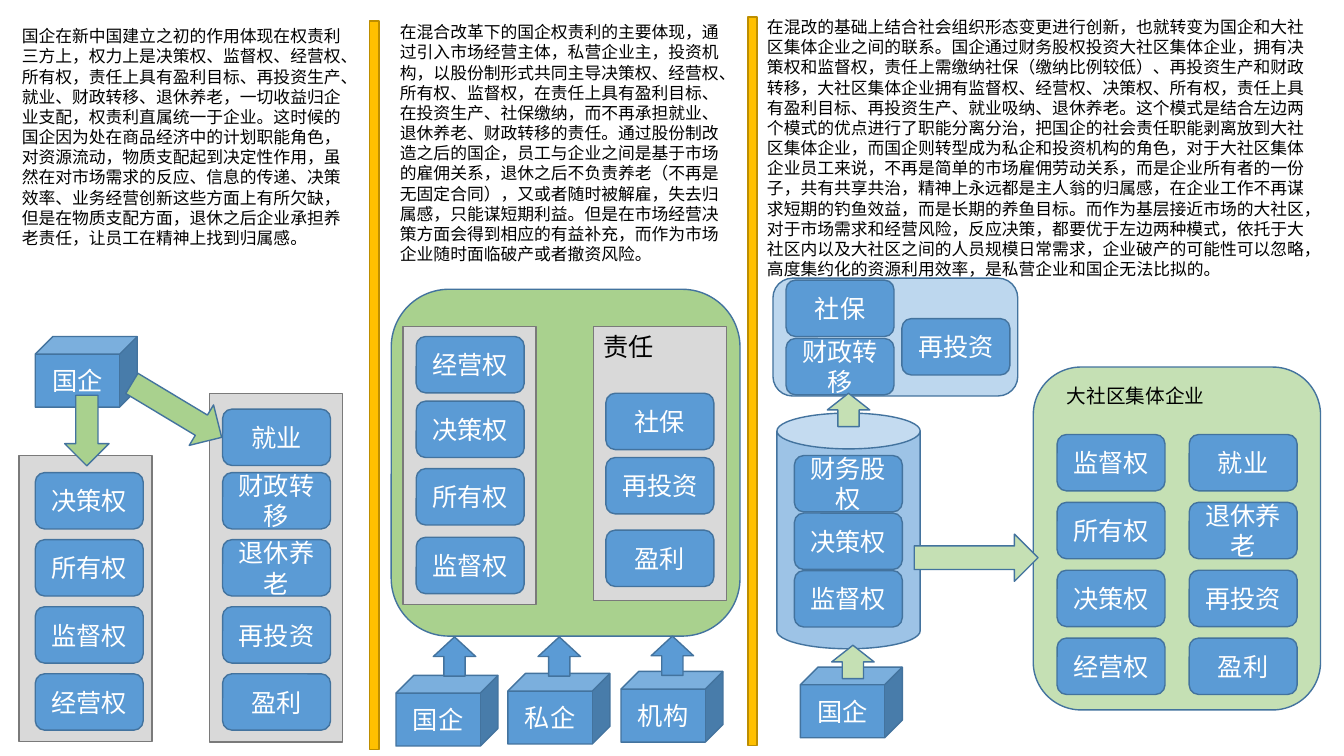
"""Build a one-slide comparison of three models of state enterprise powers and duties."""
from dataclasses import dataclass
from typing import Optional

from pptx import Presentation
from pptx.dml.color import RGBColor
from pptx.enum.shapes import MSO_SHAPE
from pptx.enum.text import MSO_ANCHOR, PP_ALIGN
from pptx.slide import Slide
from pptx.text.text import TextFrame
from pptx.util import Cm, Pt


@dataclass(frozen=True)
class Theme:
    font: str = "Calibri"
    label_size: int = 18
    caption_size: int = 14
    body_size: int = 12
    line_width: int = 1
    text: str = "000000"
    label: str = "FFFFFF"
    blue: str = "5B9BD5"
    can_blue: str = "9DC3E6"
    pale_blue: str = "BDD7EE"
    outline: str = "43739E"
    green: str = "A9D18E"
    pale_green: str = "C5E0B4"
    grey: str = "D9D9D9"
    grey_outline: str = "7A7A7A"
    gold: str = "FFC000"
    gold_outline: str = "BD8E00"


THEME = Theme()


@dataclass(frozen=True)
class Block:
    kind: MSO_SHAPE
    left: float
    top: float
    width: float
    height: float
    fill: str = THEME.blue
    line: str = THEME.outline
    label: Optional[str] = None
    rotation: float = 0


@dataclass(frozen=True)
class Column:
    left: float
    tops: tuple[float, ...]
    labels: tuple[str, ...]


@dataclass(frozen=True)
class Note:
    left: float
    top: float
    width: float
    height: float
    size: int
    text: str


def steps(top: float, pitch: float, count: int) -> tuple[float, ...]:
    """Return evenly spaced top positions."""
    return tuple(top + pitch * index for index in range(count))


def divider(left: float, top: float) -> Block:
    """Describe a gold bar between two models."""
    return Block(MSO_SHAPE.RECTANGLE, left, top, 0.23, 18.36, THEME.gold, THEME.gold_outline)


def group_box(left: float, top: float, height: float) -> Block:
    """Describe a grey box behind a column of labels."""
    return Block(MSO_SHAPE.RECTANGLE, left, top, 3.35, height, THEME.grey, THEME.grey_outline)


def cube(left: float, top: float, label: str) -> Block:
    """Describe an investor cube."""
    return Block(MSO_SHAPE.CUBE, left, top, 2.57, 1.78, label=label)


def up_arrow(left: float, top: float, height: float, fill: str) -> Block:
    """Describe an upward arrow."""
    return Block(MSO_SHAPE.UP_ARROW, left, top, 1.07, height, fill)


PANELS = (
    divider(9.32, 0.53),
    divider(18.85, 0.43),
    Block(MSO_SHAPE.ROUNDED_RECTANGLE, 9.86, 7.29, 8.79, 8.74, THEME.green),
    group_box(0.48, 11.48, 7.21),
    group_box(5.28, 9.91, 8.79),
    group_box(10.16, 8.23, 7.01),
    group_box(14.96, 8.23, 6.91),
    Block(MSO_SHAPE.CAN, 19.58, 10.41, 3.61, 5.94, THEME.can_blue),
    Block(MSO_SHAPE.ROUNDED_RECTANGLE, 26.04, 9.25, 7.24, 8.64, THEME.pale_green),
    Block(MSO_SHAPE.ROUNDED_RECTANGLE, 19.48, 7.01, 6.17, 2.97, THEME.pale_blue),
)

CUBES = (
    cube(0.89, 8.48, "国企"),
    cube(9.98, 17.02, "国企"),
    cube(12.8, 16.97, "私企"),
    cube(15.65, 16.92, "机构"),
    cube(20.17, 16.81, "国企"),
)

STATE_TOPS = steps(11.91, 1.69, 4)
COMMUNITY_TOPS = steps(10.95, 1.71, 4)
COLUMNS = (
    Column(0.89, STATE_TOPS, ("决策权", "所有权", "监督权", "经营权")),
    Column(5.61, (10.31, *STATE_TOPS), ("就业", "财政转移", "退休养老", "再投资", "盈利")),
    Column(10.49, (8.48, 10.11, 11.81, 13.54), ("经营权", "决策权", "所有权", "监督权")),
    Column(15.27, (9.91, 11.53, 13.36), ("社保", "再投资", "盈利")),
    Column(20.02, steps(11.48, 1.45, 3), ("财务股权", "决策权", "监督权")),
    Column(19.81, steps(7.06, 1.47, 2), ("社保", "财政转移")),
    Column(22.73, (8.03,), ("再投资",)),
    Column(26.64, COMMUNITY_TOPS, ("监督权", "所有权", "决策权", "经营权")),
    Column(29.97, COMMUNITY_TOPS, ("就业", "退休养老", "再投资", "盈利")),
)
NODES = tuple(
    Block(MSO_SHAPE.ROUNDED_RECTANGLE, column.left, top, 2.72, 1.42, label=label)
    for column in COLUMNS
    for top, label in zip(column.tops, column.labels)
)

ARROWS = (
    Block(MSO_SHAPE.DOWN_ARROW, 1.63, 9.96, 1.12, 1.78, THEME.green),
    Block(MSO_SHAPE.DOWN_ARROW, 3.86, 9.02, 1.19, 2.64, THEME.green, rotation=301),
    up_arrow(10.92, 16.05, 0.99, THEME.blue),
    up_arrow(13.56, 16.05, 0.99, THEME.blue),
    up_arrow(16.41, 16.03, 0.99, THEME.blue),
    up_arrow(20.96, 16.26, 0.84, THEME.pale_green),
    up_arrow(20.85, 9.91, 0.84, THEME.pale_green),
    Block(MSO_SHAPE.RIGHT_ARROW, 23.04, 13.46, 3.12, 1.19, THEME.pale_green),
)

NOTES = (
    Note(14.96, 8.23, 2.34, 1.02, THEME.label_size, "责任"),
    Note(26.64, 9.55, 4.29, 0.86, THEME.caption_size, "大社区集体企业"),
    Note(0.3, 0.53, 8.69, 5.89, THEME.body_size, "国企在新中国建立之初的作用体现在权责利三方上，权力上是决策权、监督权、经营权、所有权，责任上具有盈利目标、再投资生产、就业、财政转移、退休养老，一切收益归企业支配，权责利直属统一于企业。这时候的国企因为处在商品经济中的计划职能角色，对资源流动，物质支配起到决定性作用，虽然在对市场需求的反应、信息的传递、决策效率、业务经营创新这些方面上有所欠缺，但是在物质支配方面，退休之后企业承担养老责任，让员工在精神上找到归属感。"),
    Note(9.83, 0.43, 8.89, 6.4, THEME.body_size, "在混合改革下的国企权责利的主要体现，通过引入市场经营主体，私营企业主，投资机构，以股份制形式共同主导决策权、经营权、所有权、监督权，在责任上具有盈利目标、在投资生产、社保缴纳，而不再承担就业、退休养老、财政转移的责任。通过股份制改造之后的国企，员工与企业之间是基于市场的雇佣关系，退休之后不负责养老（不再是无固定合同），又或者随时被解雇，失去归属感，只能谋短期利益。但是在市场经营决策方面会得到相应的有益补充，而作为市场企业随时面临破产或者撤资风险。"),
    Note(19.08, 0.3, 14.2, 6.93, THEME.body_size, "在混改的基础上结合社会组织形态变更进行创新，也就转变为国企和大社区集体企业之间的联系。国企通过财务股权投资大社区集体企业，拥有决策权和监督权，责任上需缴纳社保（缴纳比例较低）、再投资生产和财政转移，大社区集体企业拥有监督权、经营权、决策权、所有权，责任上具有盈利目标、再投资生产、就业吸纳、退休养老。这个模式是结合左边两个模式的优点进行了职能分离分治，把国企的社会责任职能剥离放到大社区集体企业，而国企则转型成为私企和投资机构的角色，对于大社区集体企业员工来说，不再是简单的市场雇佣劳动关系，而是企业所有者的一份子，共有共享共治，精神上永远都是主人翁的归属感，在企业工作不再谋求短期的钓鱼效益，而是长期的养鱼目标。而作为基层接近市场的大社区，对于市场需求和经营风险，反应决策，都要优于左边两种模式，依托于大社区内以及大社区之间的人员规模日常需求，企业破产的可能性可以忽略，高度集约化的资源利用效率，是私营企业和国企无法比拟的。"),
)


def write_text(frame: TextFrame, text: str, size: int, color: str,
               anchor: MSO_ANCHOR, alignment: PP_ALIGN) -> None:
    """Write one formatted paragraph into a text frame."""
    paragraph = frame.paragraphs[0]
    run = paragraph.add_run()
    formats = {
        frame: {"word_wrap": True, "vertical_anchor": anchor},
        paragraph: {"alignment": alignment},
        run: {"text": text},
        run.font: {"name": THEME.font, "size": Pt(size)},
        run.font.fill: {},
    }
    for target, values in formats.items():
        for name, value in values.items():
            setattr(target, name, value)
    run.font.color.rgb = RGBColor.from_string(color)


def draw_block(slide: Slide, block: Block) -> None:
    """Draw a filled shape with an optional centred label."""
    shape = slide.shapes.add_shape(
        block.kind, Cm(block.left), Cm(block.top), Cm(block.width), Cm(block.height))
    shape.rotation = block.rotation
    shape.shadow.inherit = False
    shape.fill.solid()
    shape.fill.fore_color.rgb = RGBColor.from_string(block.fill)
    shape.line.color.rgb = RGBColor.from_string(block.line)
    shape.line.width = Pt(THEME.line_width)
    if block.label:
        write_text(shape.text_frame, block.label, THEME.label_size, THEME.label,
                   MSO_ANCHOR.MIDDLE, PP_ALIGN.CENTER)


def draw_note(slide: Slide, note: Note) -> None:
    """Draw a wrapped text box."""
    box = slide.shapes.add_textbox(
        Cm(note.left), Cm(note.top), Cm(note.width), Cm(note.height))
    write_text(box.text_frame, note.text, note.size, THEME.text,
               MSO_ANCHOR.TOP, PP_ALIGN.LEFT)


def main() -> None:
    """Build and save the presentation."""
    presentation = Presentation()
    presentation.slide_width, presentation.slide_height = Cm(33.87), Cm(19.05)
    slide = presentation.slides.add_slide(presentation.slide_layouts[6])
    for block in (*PANELS, *CUBES, *NODES, *ARROWS):
        draw_block(slide, block)
    for note in NOTES:
        draw_note(slide, note)
    presentation.save("out.pptx")


if __name__ == "__main__":
    main()
